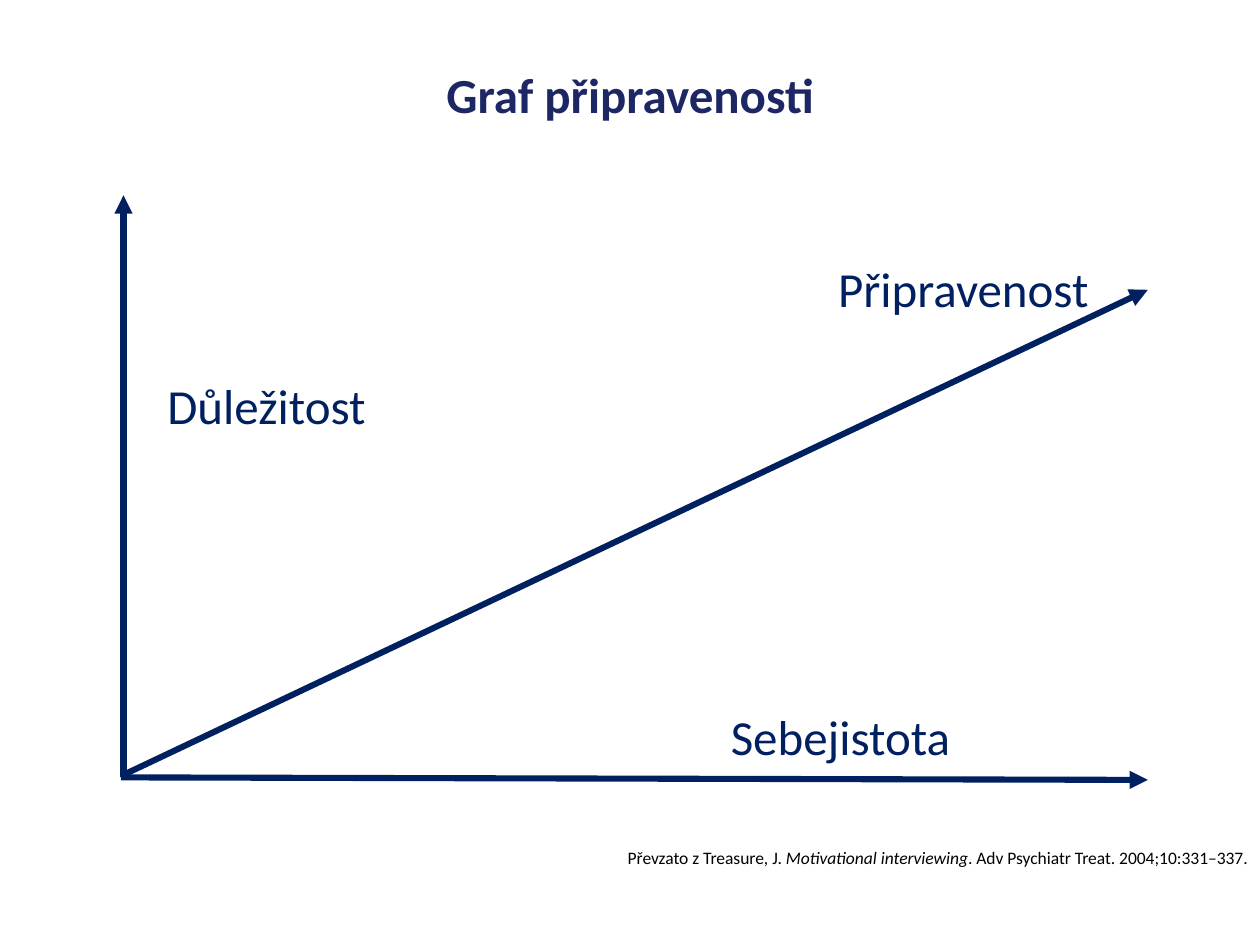
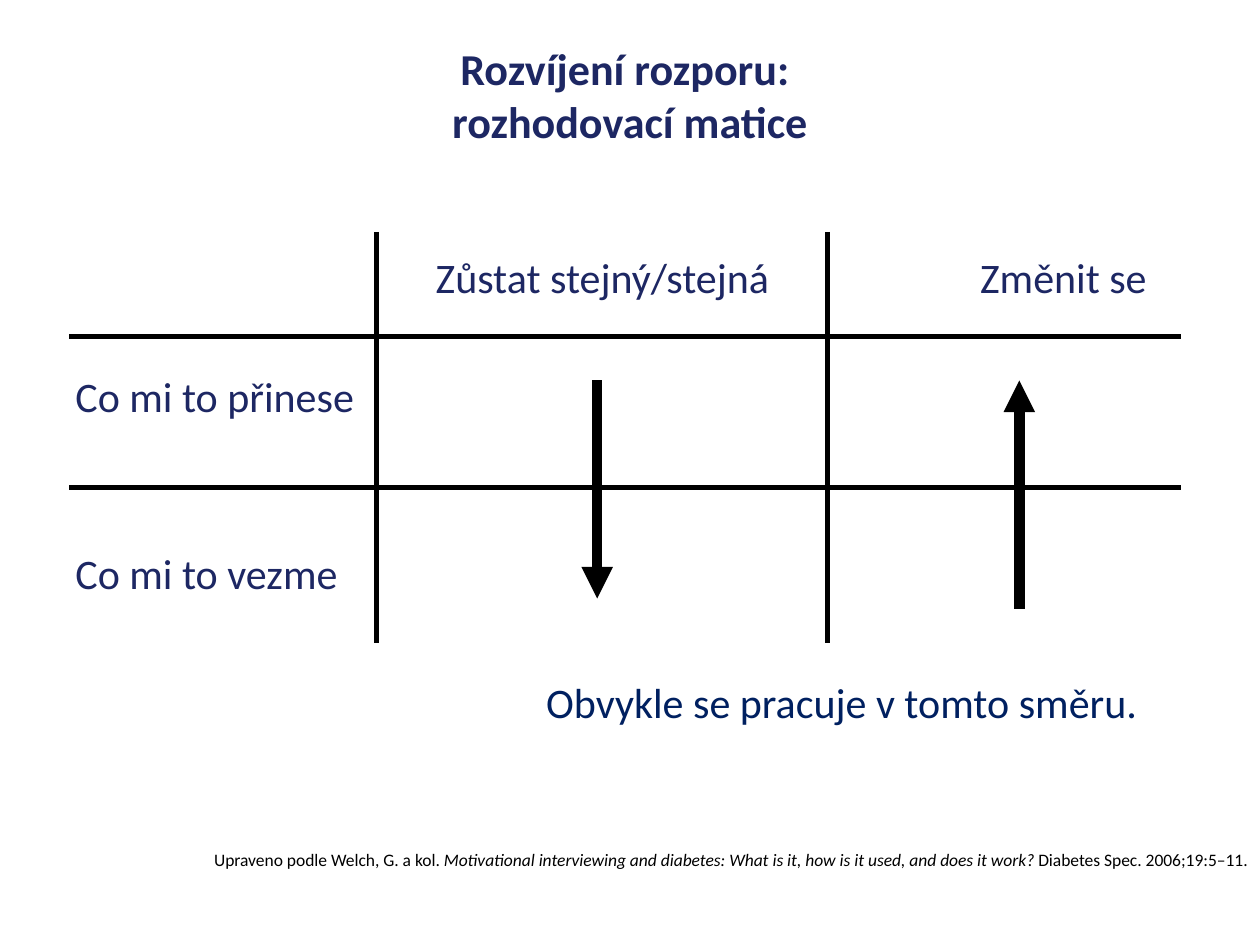
from dataclasses import dataclass

import pptx
import pptx.dml.color
import pptx.enum.shapes
import pptx.enum.text
import pptx.oxml
import pptx.oxml.ns
import pptx.slide
import pptx.text.text
import pptx.util

RGBColor = pptx.dml.color.RGBColor
Inches = pptx.util.Inches
Align = pptx.enum.text.PP_ALIGN
Anchor = pptx.enum.text.MSO_ANCHOR

INDIGO = RGBColor(0x1D, 0x27, 0x63)
NAVY = RGBColor(0x00, 0x20, 0x60)
BLACK = RGBColor(0x00, 0x00, 0x00)
FONT = "Calibri"


@dataclass
class Label:
    text: str
    left: float
    top: float
    width: float
    height: float
    size: float
    color: RGBColor = NAVY
    align: Align = Align.CENTER
    bold: bool = False
    anchor: Anchor = Anchor.TOP


@dataclass
class Line:
    start: tuple[float, float]
    end: tuple[float, float]
    width: float
    color: RGBColor = BLACK
    arrow: bool = False


def style_run(run: pptx.text.text._Run, label: Label) -> None:
    font = run.font
    font.name = FONT
    font.size = pptx.util.Pt(label.size)
    font.bold = label.bold
    font.color.rgb = label.color


def draw_label(slide: pptx.slide.Slide, label: Label) -> None:
    """Draw a text box; every second part between asterisks is italic."""
    box = slide.shapes.add_textbox(
        Inches(label.left), Inches(label.top), Inches(label.width), Inches(label.height))
    frame = box.text_frame
    frame.word_wrap = True
    frame.vertical_anchor = label.anchor
    para = frame.paragraphs[0]
    para.alignment = label.align
    parts = label.text.split("*")
    para.text = parts[0]
    for part in parts[1:]:
        para.add_run().text = part
    if len(parts) > 1:
        para.runs[1].font.italic = True
    for run in para.runs:
        style_run(run, label)


def draw_line(slide: pptx.slide.Slide, line: Line) -> None:
    x1, y1, x2, y2 = (Inches(v) for v in (*line.start, *line.end))
    shape = slide.shapes.add_connector(
        pptx.enum.shapes.MSO_CONNECTOR.STRAIGHT, x1, y1, x2, y2)
    shape.line.color.rgb = line.color
    shape.line.width = pptx.util.Pt(line.width)
    props = shape._element.spPr
    if line.arrow:
        tip = pptx.oxml.parse_xml(
            f'<a:tailEnd {pptx.oxml.ns.nsdecls("a")} type="triangle"/>')
        props.find(pptx.oxml.ns.qn("a:ln")).append(tip)
    props.append(pptx.oxml.parse_xml(f'<a:effectLst {pptx.oxml.ns.nsdecls("a")}/>'))


def start_slide(deck: pptx.presentation.Presentation, title: str, size: float,
                source: str, left: float, top: float) -> pptx.slide.Slide:
    """Add a slide with its title and a source note that ends at the right edge."""
    slide = deck.slides.add_slide(deck.slide_layouts[6])
    draw_label(slide, Label(title, 0.5, 0.32, 9, 0.85, size, INDIGO,
                            bold=True, anchor=Anchor.MIDDLE))
    draw_label(slide, Label(source, left, top, 10 - left, 0.27, 10, BLACK, Align.RIGHT))
    return slide


def build_graph(deck: pptx.presentation.Presentation) -> None:
    slide = start_slide(
        deck, "Graf připravenosti", 28,
        "Převzato z Treasure, J. *Motivational interviewing*"
        ". Adv Psychiatr Treat. 2004;10:331–337.", 4.58, 6.67)
    for start, end in (((1, 6.14), (9.11, 2.3)),
                       ((0.96, 6.17), (9.11, 6.19)),
                       ((0.98, 6.17), (0.98, 1.55))):
        draw_line(slide, Line(start, end, 3.5, NAVY, arrow=True))
    for text, left, top, width in (("Důležitost", 0.89, 2.93, 2.45),
                                   ("Sebejistota", 5.33, 5.56, 2.68),
                                   ("Připravenost", 6.42, 2, 2.45)):
        draw_label(slide, Label(text, left, top, width, 0.57, 28))


def build_matrix(deck: pptx.presentation.Presentation) -> None:
    slide = start_slide(
        deck, "Rozvíjení rozporu: \vrozhodovací matice", 25.2,
        "Upraveno podle Welch, G. a kol. *Motivational interviewing and diabetes: "
        "What is it, how is it used, and does it work? *Diabetes Spec. 2006;19:5–11.",
        1.36, 6.69)

    cols, rows = (2.99, 6.57), (2.67, 3.87)
    for x in cols:
        draw_line(slide, Line((x, 1.84), (x, 5.1), 2.75))
    for y in rows:
        draw_line(slide, Line((0.55, y), (9.37, y), 2.75))
    for x, tail, tip in ((4.74, 3.02, 4.75), (8.09, 4.83, 3.02)):
        draw_line(slide, Line((x, tail), (x, tip), 6, arrow=True))

    top, pitch = 1.95, 0.47
    draw_label(slide, Label("Zůstat stejný/stejná", cols[0], top,
                            cols[1] - cols[0], 0.5, 24, INDIGO))
    draw_label(slide, Label("Změnit se", 7.44, top, 2, 0.5, 24, INDIGO))
    for text, step in (("Co mi to přinese", 2), ("Co mi to vezme", 5)):
        draw_label(slide, Label(text, 0.5, top + step * pitch, 2.49, 0.5, 24,
                                INDIGO, Align.LEFT))
    draw_label(slide, Label("Obvykle se pracuje v tomto směru.", 3.84, 5.32, 5.68, 0.5, 24))


def main() -> None:
    deck = pptx.Presentation()
    deck.slide_width, deck.slide_height = Inches(10), Inches(7.5)
    build_graph(deck)
    build_matrix(deck)
    deck.save("out.pptx")


if __name__ == "__main__":
    main()
